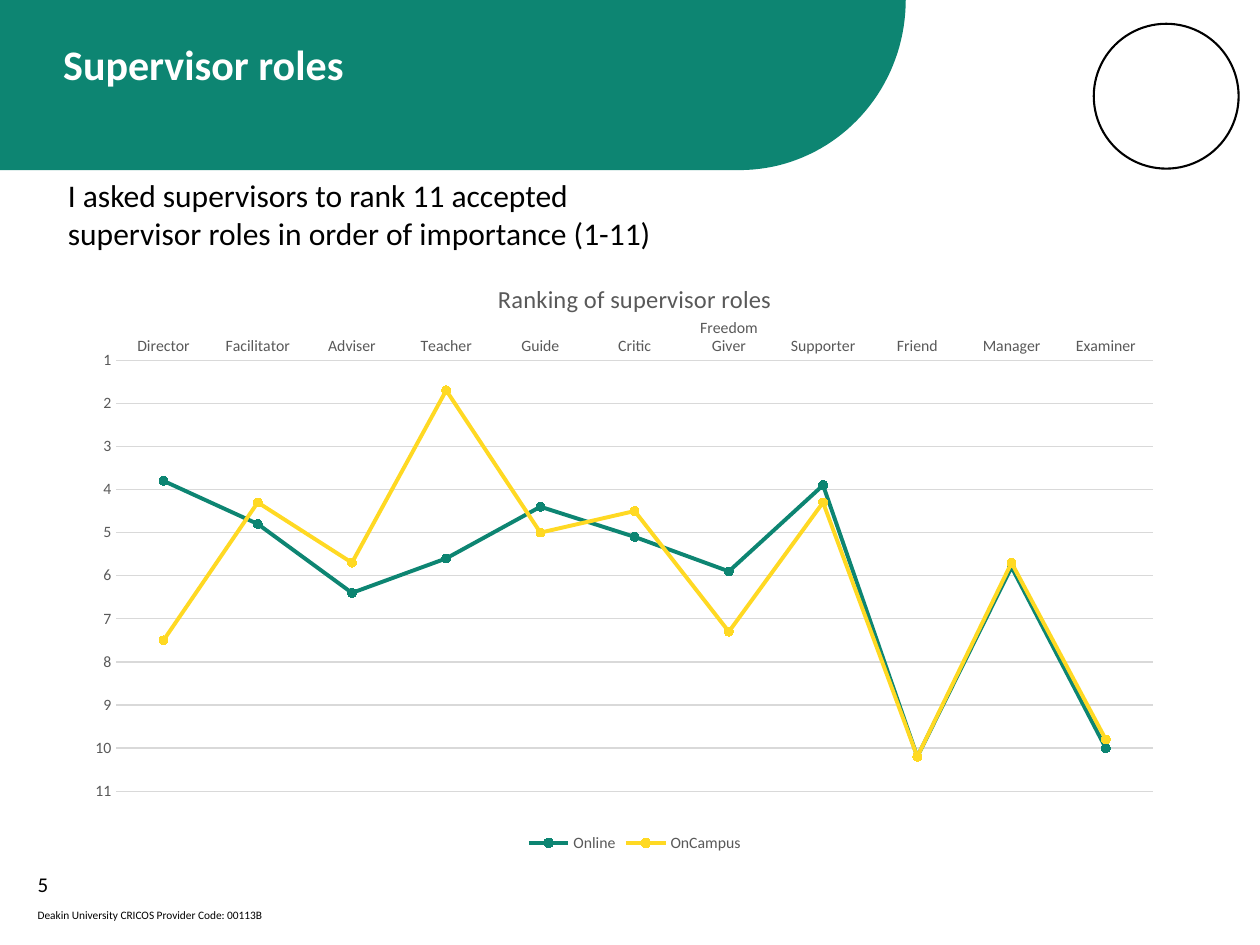
"""Builds the supervisor roles slide with its ranking line chart."""
from math import cos, pi, sin

from lxml import etree
from pptx import Presentation
from pptx.chart.data import CategoryChartData
from pptx.dml.color import RGBColor
from pptx.enum.chart import XL_CHART_TYPE, XL_LEGEND_POSITION, XL_MARKER_STYLE, XL_TICK_MARK
from pptx.enum.shapes import MSO_SHAPE
from pptx.enum.text import MSO_ANCHOR, PP_ALIGN
from pptx.oxml.ns import qn
from pptx.util import Cm, Pt

LINE_MARKERS = XL_CHART_TYPE.LINE_MARKERS
BOTTOM = XL_LEGEND_POSITION.BOTTOM
CIRCLE = XL_MARKER_STYLE.CIRCLE
NO_TICK = XL_TICK_MARK.NONE
OVAL = MSO_SHAPE.OVAL
TOP, MIDDLE = MSO_ANCHOR.TOP, MSO_ANCHOR.MIDDLE
LEFT = PP_ALIGN.LEFT

FONT = "Calibri"
COLORS = {"green": "0D8572", "yellow": "FFD923", "black": "000000",
          "white": "FFFFFF", "text": "595959", "grid": "D9D9D9"}


def style_font(font, size, color, bold=False):
    font.name, font.size, font.bold = FONT, Pt(size), bold
    font.color.rgb = RGBColor.from_string(COLORS[color])


def fill_text(shape, text, size, color, anchor, bold=False):
    frame = shape.text_frame
    frame.text = text
    frame.word_wrap = True
    frame.vertical_anchor = anchor
    para = frame.paragraphs[0]
    para.alignment = LEFT
    style_font(para.runs[0].font, size, color, bold)


deck = Presentation()
deck.slide_width, deck.slide_height = Cm(25.4), Cm(19.05)
page = deck.slides.add_slide(deck.slide_layouts[5])

banner_width, banner_height, corner = 18.26, 3.43, 3.35
steps = 40
arc = [(Cm(banner_width - corner + corner * cos(pi / 2 * step / steps)),
        Cm(banner_height * sin(pi / 2 * step / steps))) for step in range(steps + 1)]
builder = page.shapes.build_freeform(0, 0)
builder.add_line_segments(arc + [(0, Cm(banner_height))], close=True)
banner = builder.convert_to_shape()
banner.shadow.inherit = False
banner.fill.solid()
banner.fill.fore_color.rgb = RGBColor.from_string(COLORS["green"])
banner.line.fill.background()

ring = page.shapes.add_shape(OVAL, Cm(22.05), Cm(0.48), Cm(2.92), Cm(2.92))
ring.shadow.inherit = False
ring.fill.background()
ring.line.color.rgb = RGBColor.from_string(COLORS["black"])
ring.line.width = Pt(1.2)

title = page.shapes.title
title.left, title.top, title.width, title.height = Cm(1.02), Cm(0.76), Cm(17.25), Cm(2.67)
fill_text(title, "Supervisor roles", 24, "white", TOP, bold=True)
title.text_frame.paragraphs[0].line_spacing = 0.9
page.shapes._spTree.append(title._element)

for text, left, top, width, height, size, anchor in (
    ("Deakin University CRICOS Provider Code: 00113B", 0.51, 18.16, 13.79, 0.56, 6.5, MIDDLE),
    ("5", 0.51, 17.48, 1.19, 0.69, 12, MIDDLE),
    ("I asked supervisors to rank 11 accepted supervisor roles in order of importance (1-11)",
     1.12, 3.43, 12.7, 1.8, 18, TOP),
):
    box = page.shapes.add_textbox(Cm(left), Cm(top), Cm(width), Cm(height))
    fill_text(box, text, size, "black", anchor)

rankings = CategoryChartData()
rankings.categories = ["Director", "Facilitator", "Adviser", "Teacher", "Guide", "Critic",
                       "Freedom Giver", "Supporter", "Friend", "Manager", "Examiner"]
rankings.add_series("Online", [3.8, 4.8, 6.4, 5.6, 4.4, 5.1, 5.9, 3.9, 10.2, 5.8, 10])
rankings.add_series("OnCampus", [7.5, 4.3, 5.7, 1.7, 5, 4.5, 7.3, 4.3, 10.2, 5.7, 9.8])
chart = page.shapes.add_chart(
    LINE_MARKERS, Cm(1.68), Cm(5.21), Cm(22.23), Cm(12.07), rankings).chart
style_font(chart.font, 10, "black")

chart.has_title = True
chart.chart_title.include_in_layout = False
chart.chart_title.text_frame.text = "Ranking of supervisor roles"
style_font(chart.chart_title.text_frame.paragraphs[0].runs[0].font, 14, "text")

chart.has_legend = True
chart.legend.position = BOTTOM
chart.legend.include_in_layout = False
style_font(chart.legend.font, 9, "text")

for axis in (chart.category_axis, chart.value_axis):
    axis.major_tick_mark = axis.minor_tick_mark = NO_TICK
    style_font(axis.tick_labels.font, 9, "text")
ranks = chart.value_axis
ranks.minimum_scale, ranks.maximum_scale, ranks.major_unit = 1, 11, 1
ranks.reverse_order = True
ranks.format.line.fill.background()
for line in (chart.category_axis.format.line, ranks.major_gridlines.format.line):
    line.color.rgb = RGBColor.from_string(COLORS["grid"])
    line.width = Pt(0.75)

chart.plots[0].vary_by_categories = False
for series, color in zip(chart.plots[0].series, ("green", "yellow")):
    shade = RGBColor.from_string(COLORS[color])
    series.smooth = False
    series.format.line.color.rgb = shade
    series.format.line.width = Pt(2.25)
    series.marker.style, series.marker.size = CIRCLE, 5
    series.marker.format.fill.solid()
    series.marker.format.fill.fore_color.rgb = shade
    series.marker.format.line.color.rgb = shade

plot_area = chart._chartSpace.chart.plotArea
for old_layout in plot_area.findall(qn("c:layout")):
    plot_area.remove(old_layout)
layout = etree.Element(qn("c:layout"))
manual = etree.SubElement(layout, qn("c:manualLayout"))
for tag, value in (("layoutTarget", "inner"), ("xMode", "edge"), ("yMode", "edge"),
                   ("x", "0.03"), ("y", "0.17"), ("w", "0.94"), ("h", "0.72")):
    etree.SubElement(manual, qn(f"c:{tag}")).set("val", value)
plot_area.insert(0, layout)

deck.save("out.pptx")
